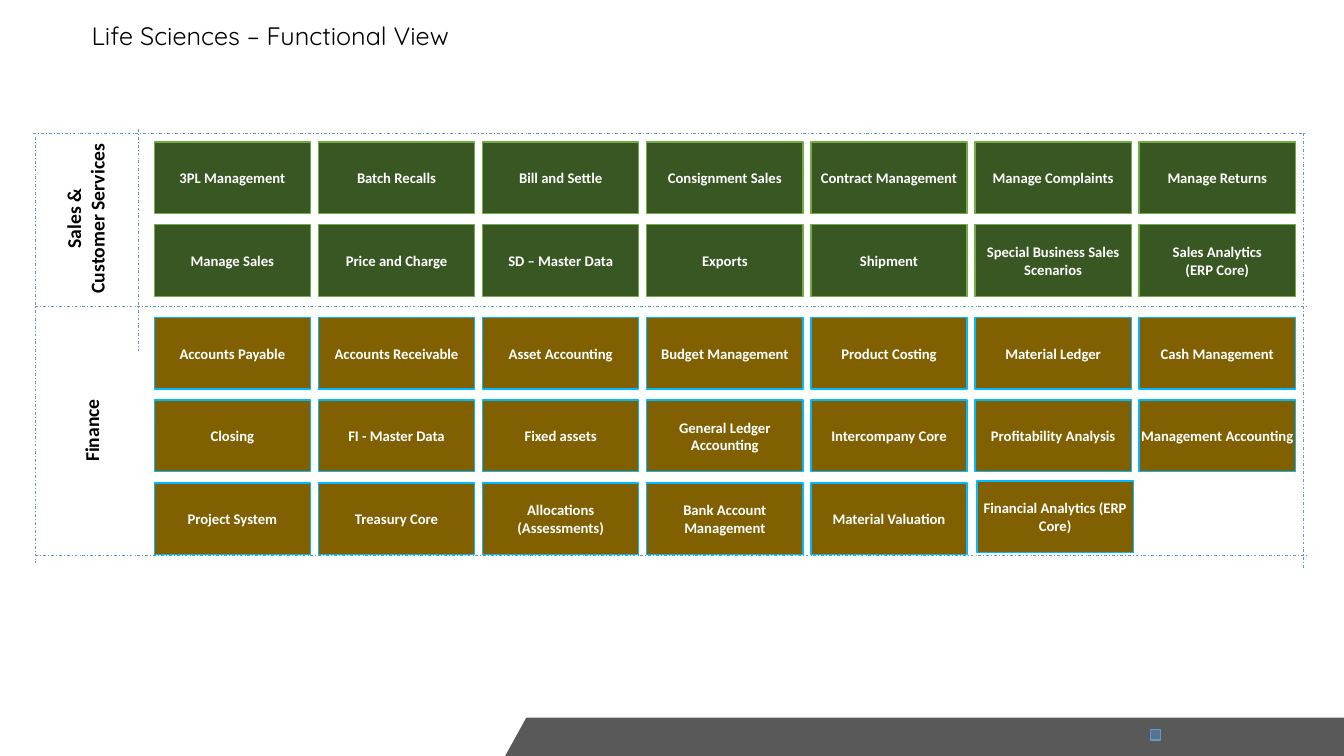
import pptx
import pptx.util
import pptx.dml.color
import pptx.enum.dml
import pptx.enum.shapes
import pptx.enum.text
import lxml.etree
from pptx.oxml.ns import qn

COLORS = {
    "ink": "000000", "white": "FFFFFF", "footer": "595959", "rule": "5B9BD5",
    "sales": "385723", "sales_edge": "70AD47",
    "finance": "806000", "finance_edge": "00BAFF",
}
TITLE = "Life Sciences – Functional View"
AREAS = [
    {
        "label": "Sales &\nCustomer Services", "label_box": (0.61, 1.3, 0.47, 1.74),
        "label_bottom": 0, "top": 1.41, "color": "sales",
        "functions": [
            ["3PL Management", "Batch Recalls", "Bill and Settle", "Consignment Sales",
             "Contract Management", "Manage Complaints", "Manage Returns"],
            ["Manage Sales", "Price and Charge", "SD – Master Data", "Exports", "Shipment",
             "Special Business Sales Scenarios", "Sales Analytics\n(ERP Core)"],
        ],
    },
    {
        "label": "Finance", "label_box": (0.79, 3.11, 0.24, 2.42),
        "label_bottom": 0.05, "top": 3.15, "color": "finance",
        "functions": [
            ["Accounts Payable", "Accounts Receivable", "Asset Accounting", "Budget Management",
             "Product Costing", "Material Ledger", "Cash Management"],
            ["Closing", "FI - Master Data", "Fixed assets", "General Ledger Accounting",
             "Intercompany Core", "Profitability Analysis", "Management Accounting"],
            ["Project System", "Treasury Core", "Allocations (Assessments)",
             "Bank Account Management", "Material Valuation", "Financial Analytics (ERP Core)"],
        ],
    },
]
NUDGES = {"Financial Analytics (ERP Core)": (0.02, -0.02)}
GRID_LEFT, COLUMN_STEP, ROW_STEP = 1.53, 1.628, 0.82
TILE_WIDTH, TILE_HEIGHT = 1.55, 0.71
RULES = [
    (1.37, 1.28, 1.37, 3.48),
    (12.93, 1.32, 12.93, 5.64),
    (0.35, 1.36, 0.35, 5.59),
    (0.33, 1.32, 12.93, 1.32),
    (0.35, 3.04, 12.95, 3.04),
    (0.35, 5.51, 12.95, 5.51),
]
FOOTER = [(5.22, 7.12), (13.33, 7.12), (13.33, 7.5), (5.01, 7.5)]
MARKER = (11.41, 7.24, 0.1, 0.1)

Inches, Pt = pptx.util.Inches, pptx.util.Pt
CENTER = pptx.enum.text.PP_ALIGN.CENTER
MIDDLE = pptx.enum.text.MSO_ANCHOR.MIDDLE


def inches(values):
    return [Inches(value) for value in values]


def rgb(name):
    return pptx.dml.color.RGBColor.from_string(COLORS[name])


def paint(shape, fill, edge=None):
    shape.shadow.inherit = False
    shape.fill.solid()
    shape.fill.fore_color.rgb = rgb(fill)
    if edge:
        shape.line.color.rgb = rgb(edge)
        shape.line.width = Pt(1)
    else:
        shape.line.fill.background()


def write(frame, text, size, color, bold=True, font="Calibri", align=CENTER):
    frame.text = text
    frame.word_wrap = True
    for paragraph in frame.paragraphs:
        paragraph.alignment = align
        for run in paragraph.runs:
            run.font.size = Pt(size)
            run.font.name = font
            run.font.bold = bold
            run.font.color.rgb = rgb(color)


def set_margins(frame, bottom=0):
    frame.margin_left = frame.margin_top = frame.margin_right = 0
    frame.margin_bottom = Inches(bottom)


def add_rectangle(shapes, box):
    return shapes.add_shape(pptx.enum.shapes.MSO_SHAPE.RECTANGLE, *inches(box))


def add_footer(shapes):
    points = [inches(point) for point in FOOTER]
    builder = shapes.build_freeform(*points[0])
    builder.add_line_segments(points[1:], close=True)
    paint(builder.convert_to_shape(), "footer")
    marker = add_rectangle(shapes, MARKER)
    paint(marker, "rule", "rule")
    tint = marker.fill._xPr.find(qn("a:solidFill"))[0]
    lxml.etree.SubElement(tint, qn("a:alpha")).set("val", "40000")


def add_title(shapes):
    frame = shapes.add_textbox(*inches((0.81, 0.03, 11.5, 0.68))).text_frame
    write(frame, TITLE, 18, "ink", False, "Quicksand", pptx.enum.text.PP_ALIGN.LEFT)
    frame.vertical_anchor = MIDDLE
    frame.paragraphs[0].line_spacing = 0.9


def add_rule(shapes, ends):
    rule = shapes.add_connector(pptx.enum.shapes.MSO_CONNECTOR.STRAIGHT, *inches(ends))
    rule.line.color.rgb = rgb("rule")
    rule.line.width = Pt(0.5)
    rule.line.dash_style = pptx.enum.dml.MSO_LINE.DASH_DOT
    lxml.etree.SubElement(rule._element.spPr, qn("a:effectLst"))


def add_area(shapes, area):
    label = shapes.add_textbox(*inches(area["label_box"])).text_frame
    write(label, area["label"], 14, "ink")
    set_margins(label, area["label_bottom"])
    label._txBody.bodyPr.set("vert", "vert270")
    for row, names in enumerate(area["functions"]):
        for column, name in enumerate(names):
            shift_x, shift_y = NUDGES.get(name, (0, 0))
            left = GRID_LEFT + column * COLUMN_STEP + shift_x
            top = area["top"] + row * ROW_STEP + shift_y
            tile = add_rectangle(shapes, (left, top, TILE_WIDTH, TILE_HEIGHT))
            paint(tile, area["color"], area["color"] + "_edge")
            write(tile.text_frame, name, 10.5, "white")
            set_margins(tile.text_frame)
            tile.text_frame.vertical_anchor = MIDDLE


def main():
    deck = pptx.Presentation()
    deck.slide_width, deck.slide_height = inches((13.33, 7.5))
    shapes = deck.slides.add_slide(deck.slide_layouts[6]).shapes
    add_footer(shapes)
    add_title(shapes)
    for area in AREAS:
        add_area(shapes, area)
    for ends in RULES:
        add_rule(shapes, ends)
    deck.save("out.pptx")


if __name__ == "__main__":
    main()
